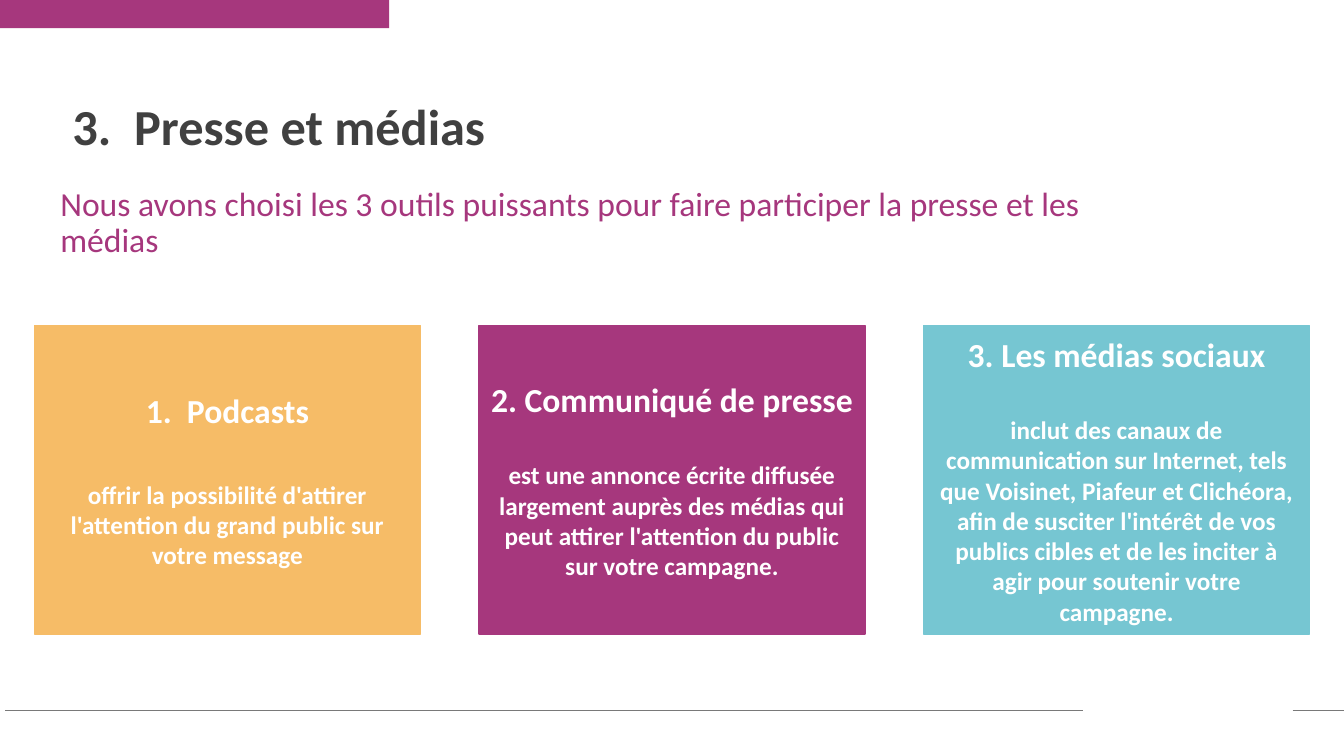
from pptx import Presentation
from pptx.dml.color import RGBColor as Rgb
from pptx.enum.shapes import MSO_CONNECTOR as Connector, MSO_SHAPE as Shape
from pptx.enum.text import MSO_ANCHOR as Anchor, PP_ALIGN as Align
from pptx.oxml.ns import qn
from pptx.util import Inches, Pt
from lxml.etree import SubElement

COLORS = {
    "plum": "A6377D",
    "amber": "F6BC67",
    "teal": "76C6D2",
    "charcoal": "404040",
    "gray": "797979",
    "white": "FFFFFF",
}
CARD_LEFT, CARD_STEP = 0.34, 4.41
CARDS = [
    ("amber", "1.  Podcasts",
     "offrir la possibilité d'attirer l'attention du grand public sur votre message", 35),
    ("plum", "2. Communiqué de presse",
     "est une annonce écrite diffusée largement auprès des médias qui peut attirer "
     "l'attention du public sur votre campagne.", 29),
    ("teal", "3. Les médias sociaux",
     "inclut des canaux de communication sur Internet, tels que Voisinet, Piafeur et "
     "Clichéora, afin de susciter l'intérêt de vos publics cibles et de les inciter à "
     "agir pour soutenir votre campagne.", 29),
]


class SlideBuilder:
    font_name = "Calibri"

    def __init__(self, slide):
        self.shapes = slide.shapes

    def color(self, name):
        return Rgb.from_string(COLORS[name])

    def style(self, paragraph, size, color, bold=False):
        font = paragraph.font
        font.name, font.size, font.bold = self.font_name, Pt(size), bold
        font.color.rgb = self.color(color)

    def rectangle(self, left, top, width, height, fill, outlined=False):
        box = self.shapes.add_shape(
            Shape.RECTANGLE, Inches(left), Inches(top), Inches(width), Inches(height))
        box.shadow.inherit = False
        box.fill.solid()
        box.fill.fore_color.rgb = self.color(fill)
        if outlined:
            box.line.color.rgb = self.color(fill)
            box.line.width = Pt(1)
        else:
            box.line.fill.background()
        return box

    def rule(self, start, end, top):
        line = self.shapes.add_connector(
            Connector.STRAIGHT, Inches(start), Inches(top), Inches(end), Inches(top))
        line.line.color.rgb = self.color("gray")
        line.line.width = Pt(0.5)
        SubElement(line._element.spPr, qn("a:effectLst"))

    def text(self, left, top, width, height, wording, size, color, bold=False):
        box = self.shapes.add_textbox(
            Inches(left), Inches(top), Inches(width), Inches(height))
        box.text_frame.word_wrap = True
        paragraph = box.text_frame.paragraphs[0]
        paragraph.text = wording
        paragraph.line_spacing = 0.9
        self.style(paragraph, size, color, bold)

    def card(self, left, fill, heading, body, gap):
        frame = self.rectangle(left, 3.23, 3.83, 3.06, fill, outlined=True).text_frame
        frame.word_wrap = True
        frame.vertical_anchor = Anchor.MIDDLE
        title, detail = frame.paragraphs[0], frame.add_paragraph()
        detail.space_before = Pt(gap)
        for paragraph, wording, size in ((title, heading, 24), (detail, body, 18)):
            paragraph.text = wording
            paragraph.alignment = Align.CENTER
            self.style(paragraph, size, "white", bold=True)


def main():
    deck = Presentation()
    deck.slide_width, deck.slide_height = Inches(13.33), Inches(7.5)
    page = SlideBuilder(deck.slides.add_slide(deck.slide_layouts[6]))

    page.rectangle(0, 0, 3.86, 0.28, "plum")
    for start, end in ((0.05, 10.74), (12.82, 13.33)):
        page.rule(start, end, 7.05)
    page.text(0.62, 0.96, 5.74, 1.6, "3.  Presse et médias", 36, "charcoal", bold=True)
    page.text(0.5, 1.81, 11.15, 1.09,
              "Nous avons choisi les 3 outils puissants pour faire participer "
              "la presse et les médias", 24, "plum")
    for index, card in enumerate(CARDS):
        page.card(CARD_LEFT + index * CARD_STEP, *card)

    deck.save("out.pptx")


if __name__ == "__main__":
    main()
